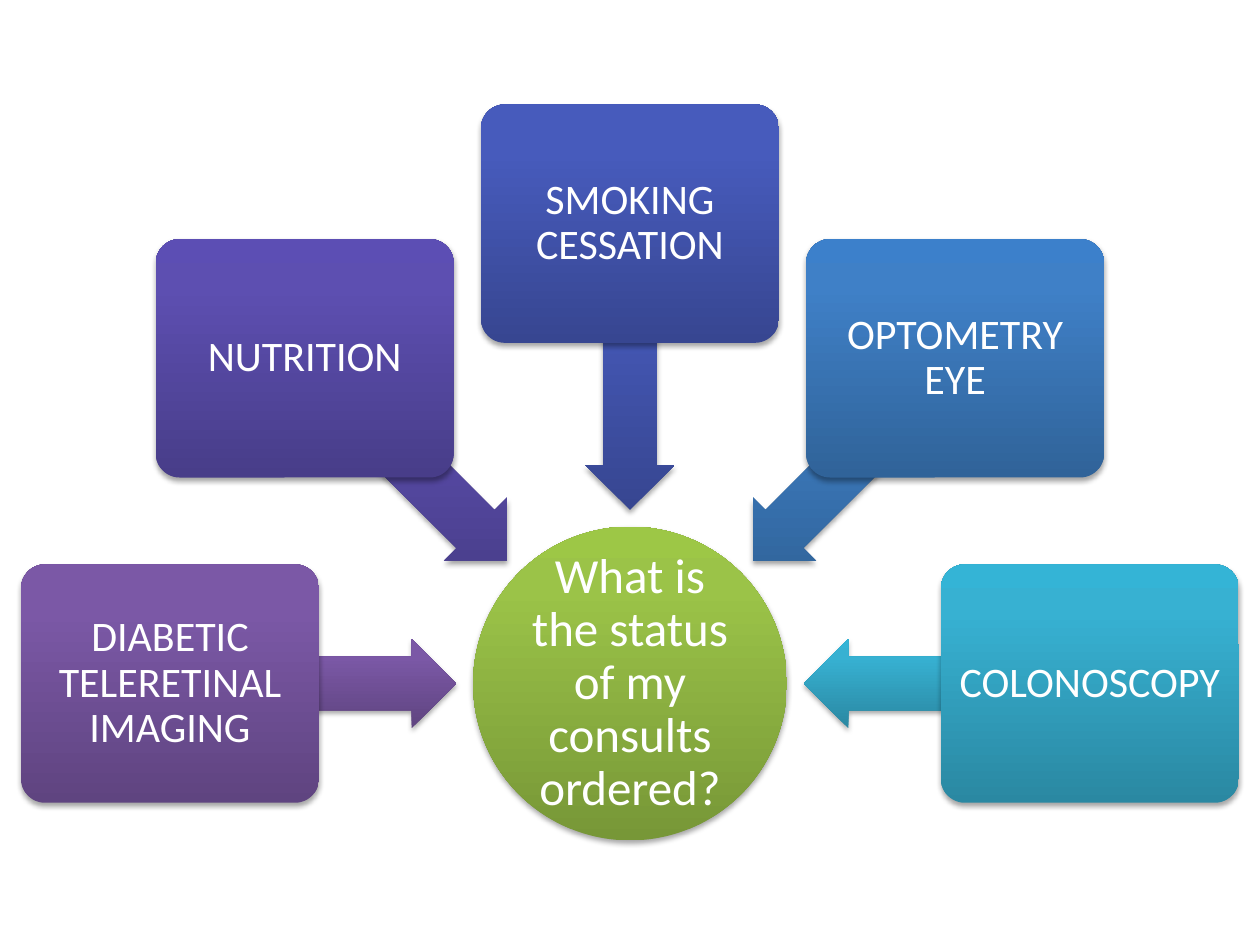
from dataclasses import dataclass
from math import cos, radians, sin

from lxml.etree import SubElement
from pptx import Presentation
from pptx.dml.color import RGBColor
from pptx.enum.shapes import MSO_SHAPE
from pptx.enum.text import MSO_ANCHOR, PP_ALIGN
from pptx.oxml.ns import qn
from pptx.util import Pt


@dataclass(frozen=True)
class Theme:
    font: str = "Calibri"
    text: str = "FFFFFF"
    shadow: str = "000000"
    hub_size: float = 28
    box_size: float = 24
    # Gradients run from bottom to top
    hub: tuple = ("779737", "9BC348", "9DC746")
    spokes: tuple = (
        ("5F4480", "7B58A6", "7C57A8"),
        ("483D89", "5D4FB1", "5C4EB4"),
        ("374691", "475BBC", "455ABF"),
        ("306399", "3F80C7", "3C80CB"),
        ("2A88A2", "37B1D2", "34B4D6"),
    )


class Diagram:
    def __init__(self, slide, theme):
        self.s = slide
        self.theme = theme

    def shape(self, kind, center, size, colors):
        """Add a gradient shape with a soft shadow, placed by its center."""
        (x, y), (w, h) = center, size
        sp = self.s.shapes.add_shape(kind, Pt(x - w / 2), Pt(y - h / 2), Pt(w), Pt(h))
        sp.line.fill.background()
        self.gradient(sp, colors)
        self.shadow(sp)
        return sp

    def gradient(self, sp, colors):
        sp.fill.gradient()
        sp.fill.gradient_angle = 90
        grad = sp._element.spPr.find(qn("a:gradFill"))
        grad.set("rotWithShape", "0")
        stops = grad.find(qn("a:gsLst"))
        for stop in list(stops):
            stops.remove(stop)
        for percent, color in zip((0, 80, 100), colors):
            stop = SubElement(stops, qn("a:gs"), pos=str(percent * 1000))
            SubElement(stop, qn("a:srgbClr"), val=color)

    def shadow(self, sp):
        sp.shadow.inherit = False
        effects = sp._element.spPr.find(qn("a:effectLst"))
        outer = SubElement(effects, qn("a:outerShdw"), blurRad=str(Pt(3.1)),
                           dist=str(Pt(1.8)), dir="5400000", rotWithShape="0")
        color = SubElement(outer, qn("a:srgbClr"), val=self.theme.shadow)
        SubElement(color, qn("a:alpha"), val="35000")

    def label(self, sp, text, size, inset):
        tf = sp.text_frame
        frame_format = {"word_wrap": True, "vertical_anchor": MSO_ANCHOR.MIDDLE}
        for side in ("left", "top", "right", "bottom"):
            frame_format[f"margin_{side}"] = Pt(inset)
        for name, value in frame_format.items():
            setattr(tf, name, value)
        p = tf.paragraphs[0]
        for name, value in {"alignment": PP_ALIGN.CENTER, "line_spacing": 0.9}.items():
            setattr(p, name, value)
        r = p.add_run()
        r.text = text
        for name, value in {"name": self.theme.font, "size": Pt(size)}.items():
            setattr(r.font, name, value)
        r.font.color.rgb = RGBColor.from_string(self.theme.text)

    def hub(self, text, center, diameter):
        sp = self.shape(MSO_SHAPE.OVAL, center, (diameter, diameter), self.theme.hub)
        self.label(sp, text, self.theme.hub_size, 1.4)

    def arrow(self, center, size, angle, colors):
        sp = self.shape(MSO_SHAPE.LEFT_ARROW, center, size, colors)
        sp.adjustments[0], sp.adjustments[1] = 0.6, 0.5
        sp.rotation = angle % 360

    def box(self, text, center, size, colors):
        sp = self.shape(MSO_SHAPE.ROUNDED_RECTANGLE, center, size, colors)
        sp.adjustments[0] = 0.1
        self.label(sp, text, self.theme.box_size, 3.6)


def around(center, radius, angle):
    x, y = center
    return x + radius * cos(radians(angle)), y + radius * sin(radians(angle))


def main():
    prs = Presentation()
    prs.slide_width, prs.slide_height = Pt(720), Pt(540)
    theme = Theme()
    diagram = Diagram(prs.slides.add_slide(prs.slide_layouts[6]), theme)

    # Central question
    center = (360, 390.6)
    diagram.hub("What is the status of my consults ordered?", center, 179.3)

    # Consults fan out over the upper half circle, each with an arrow to the hub
    consults = ("DIABETIC TELERETINAL IMAGING", "NUTRITION", "SMOKING CESSATION",
                "OPTOMETRY EYE", "COLONOSCOPY")
    for i, (text, colors) in enumerate(zip(consults, theme.spokes)):
        angle = 180 + 45 * i
        diagram.arrow(around(center, 181, angle), (163.4, 51.1), angle, colors)
        diagram.box(text, around(center, 262.8, angle), (170.2, 136.2), colors)

    prs.save("out.pptx")


if __name__ == "__main__":
    main()
